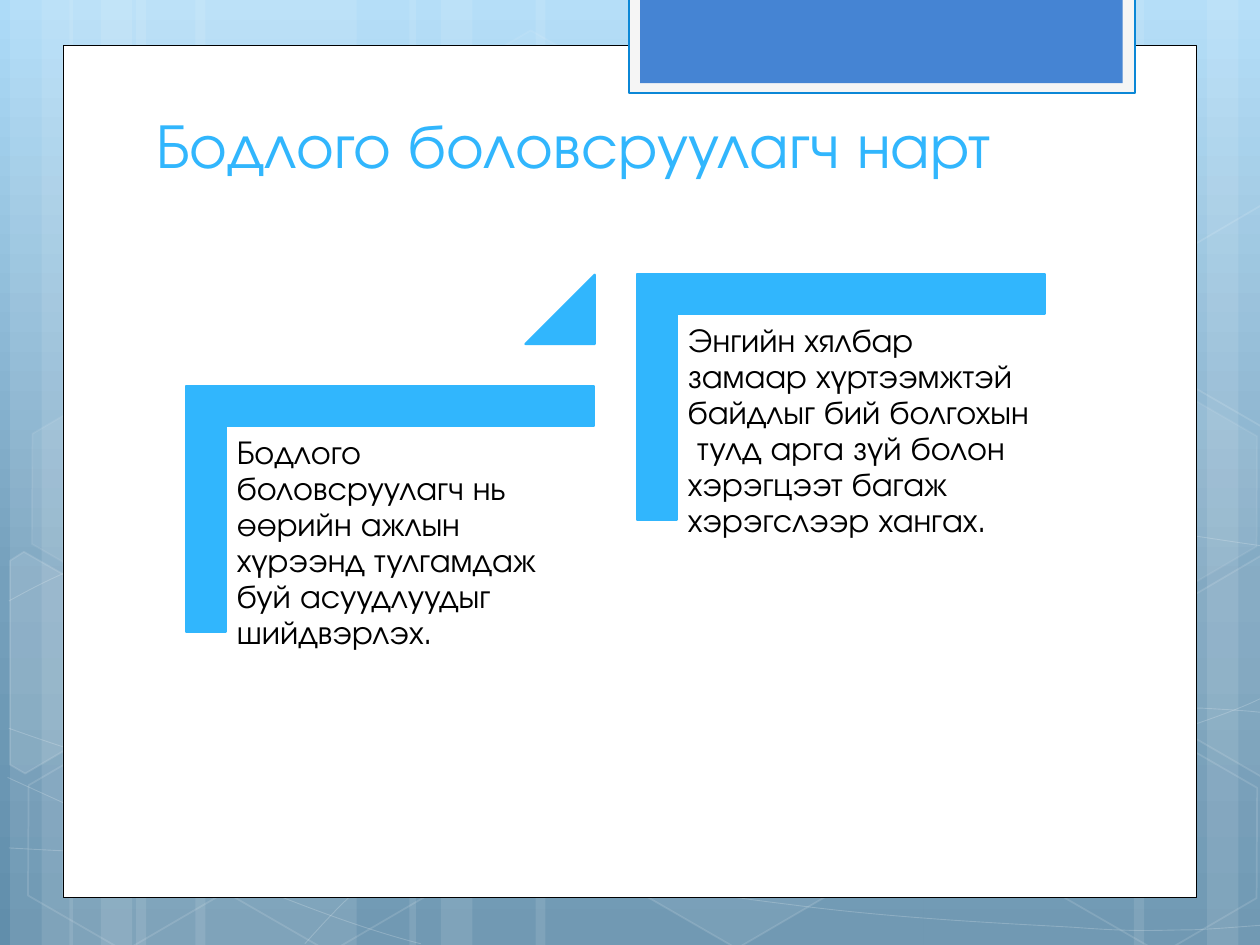
from lxml import etree
from pptx import Presentation
from pptx import util as u
from pptx.dml.color import RGBColor
from pptx.enum import shapes, text
from pptx.oxml import parse_xml
from pptx.oxml.ns import qn

FONT = "TeX Gyre Adventor"
BLUE, WHITE = "31B6FD", "FFFFFF"
TITLE = "Бодлого боловсруулагч нарт"
STEPS = [
    "Бодлого боловсруулагч нь өөрийн ажлын хүрээнд тулгамдаж буй "
    "асуудлуудыг шийдвэрлэх.",
    "Энгийн хялбар замаар хүртээмжтэй байдлыг бий болгохын  тулд "
    "арга зүй болон хэрэгцээт багаж хэрэгслээр хангах.",
]
SKY = [(0, "ADDBF8"), (62, "75A0BC"), (100, "618EAB")]

# Background bands: left, width
BANDS = [(1.08, 1.75), (0.08, 0.5), (0.33, 0.83), (1.55, 1.75), (0.55, 0.5),
         (0.8, 0.83), (7.33, 1.75), (9.58, 0.5), (9, 0.83), (4.25, 3.08),
         (3.25, 0.5), (3.5, 0.83)]

# Curves: a start point, then three points for each cubic piece
CURVES = [
    [(0.07, 6.73), (0.61, 6.76), (1.15, 6.79), (1.9, 6.78), (2.65, 6.77),
     (3.58, 6.75), (4.58, 6.65), (5.58, 6.55), (7, 6.36), (7.92, 6.17),
     (8.83, 5.98), (9.77, 5.68), (10.07, 5.51)],
    [(0.07, 4.77), (0.36, 4.61), (0.65, 4.46), (1.21, 4.31), (1.78, 4.16),
     (2.59, 3.94), (3.47, 3.87), (4.36, 3.8), (5.44, 3.79), (6.54, 3.87),
     (7.64, 3.95), (9.47, 4.26), (10.07, 4.34)],
    [(0.06, 6.17), (1.27, 6.72), (2.47, 7.27), (3.34, 7.49)],
    [(0.07, 5.78), (0.38, 5.89), (0.7, 6), (1.28, 6.16), (1.86, 6.31),
     (2.73, 6.56), (3.57, 6.73), (4.4, 6.9), (5.45, 7.08), (6.28, 7.18),
     (7.11, 7.29), (8, 7.33), (8.53, 7.36), (9.05, 7.4), (9.19, 7.38),
     (9.45, 7.38), (9.71, 7.37), (9.89, 7.35), (10.07, 7.34)],
    [(2.42, 7.49), (2.6, 7.29), (2.78, 7.09), (3.02, 6.91), (3.26, 6.73),
     (3.6, 6.53), (3.88, 6.39), (4.16, 6.25), (4.33, 6.19), (4.7, 6.09),
     (5.06, 5.99), (5.73, 5.85), (6.08, 5.78), (6.44, 5.71), (6.49, 5.71),
     (6.8, 5.69), (7.11, 5.66), (7.6, 5.63), (7.94, 5.62), (8.29, 5.61),
     (8.86, 5.62), (8.86, 5.62), (9.08, 5.62), (9.31, 5.62), (9.53, 5.62),
     (9.71, 5.63), (9.88, 5.64), (9.97, 5.65), (10.06, 5.66), (10.03, 5.65),
     (10.06, 5.66)],
]

# Hexagons: left, top, fill opacity, line opacity
HEXES = [(3.34, 0.36, 4, 8), (4.97, 5.89, 6, 12), (0.11, 5.91, 0, 12),
         (0.14, 3.12, 7, 8), (1.74, 5.92, 0, 12), (7.53, 4.53, 10, 12),
         (8.34, 5.93, 0, 12), (8.34, 3.14, 7, 8)]

# Hexagons cut by the slide edge: fill opacity, corners
CUTS = [
    (10, [(0.08, 4.45), (0.19, 4.38), (0.96, 4.82), (0.95, 5.7),
          (0.2, 6.14), (0.08, 6.07)]),
    (4, [(9.26, 4.85), (10.01, 4.41), (10.09, 4.46), (10.09, 6.13),
         (10.02, 6.17), (9.26, 5.73)]),
    (0, [(9.26, 2.07), (10.01, 1.63), (10.1, 1.68), (10.09, 3.35),
         (10.02, 3.39), (9.26, 2.95)]),
]

deck = Presentation()
deck.slide_width, deck.slide_height = u.Inches(10), u.Inches(7.5)
slide = deck.slides.add_slide(deck.slide_layouts[6])
KIND = shapes.MSO_SHAPE


def paint(fill, tone, alpha=100):
    """Solid fill with opacity in percent; none if there is nothing to show."""
    if not tone or not alpha:
        fill.background()
        return
    fill.solid()
    fill.fore_color.rgb = RGBColor.from_string(tone)
    if alpha < 100:
        node = fill.fore_color._xFill.find(qn("a:srgbClr"))
        etree.SubElement(node, qn("a:alpha"), val=str(alpha * 1000))


def style(item, fill=None, alpha=100, line=None, width=1, fade=100):
    item.shadow.inherit = False
    paint(item.fill, fill, alpha)
    paint(item.line.fill, line, fade)
    if line:
        item.line.width = u.Pt(width)


def shape(kind, box, turn=0, adj=(), **look):
    item = slide.shapes.add_shape(kind, *map(u.Inches, box))
    item.rotation = turn
    for i, value in enumerate(adj):
        item.adjustments[i] = value
    style(item, **look)


def trace(points, close, **look):
    spots = [(u.Inches(x), u.Inches(y)) for x, y in points]
    pen = slide.shapes.build_freeform(*spots[0])
    pen.add_line_segments(spots[1:], close=close)
    item = pen.convert_to_shape()
    style(item, **look)
    return item


def bend(item):
    """Join each three straight segments into one cubic curve."""
    lines = list(item._element.iter(qn("a:lnTo")))
    for i in range(0, len(lines), 3):
        cubic = etree.Element(qn("a:cubicBezTo"))
        lines[i].addprevious(cubic)
        for line in lines[i:i + 3]:
            cubic.append(line[0])
            line.getparent().remove(line)


def write(words, box, size, tone, pads, space=1):
    frame = slide.shapes.add_textbox(*map(u.Inches, box)).text_frame
    frame.word_wrap = True
    frame.vertical_anchor = text.MSO_ANCHOR.TOP
    (frame.margin_left, frame.margin_top,
     frame.margin_right, frame.margin_bottom) = map(u.Inches, pads)
    frame.text = words
    para = frame.paragraphs[0]
    para.line_spacing = space
    font = para.runs[0].font
    font.name, font.size = FONT, u.Pt(size)
    font.color.rgb = RGBColor.from_string(tone)


def backdrop():
    stops = "".join(f'<a:gs pos="{p * 1000}"><a:srgbClr val="{c}"/></a:gs>'
                    for p, c in SKY)
    space = "http://schemas.openxmlformats.org/"
    slide.element.cSld.insert(0, parse_xml(
        f'<p:bg xmlns:p="{space}presentationml/2006/main" '
        f'xmlns:a="{space}drawingml/2006/main"><p:bgPr><a:gradFill>'
        f'<a:gsLst>{stops}</a:gsLst><a:lin ang="5400000" scaled="0"/>'
        '</a:gradFill><a:effectLst/></p:bgPr></p:bg>'))
    for left, width in BANDS:
        shape(KIND.RECTANGLE, (left, 0, width, 7.5), fill=WHITE, alpha=10)
    for curve in CURVES:
        bend(trace(curve, False, line=WHITE, width=0.5, fade=20))
    for left, top, alpha, fade in HEXES:
        shape(KIND.HEXAGON, (left, top, 1.75, 1.52), 30, [0.285],
              fill=WHITE, alpha=alpha, line=WHITE, fade=fade)
    for alpha, points in CUTS:
        trace(points, True, fill=WHITE, alpha=alpha, line=WHITE, fade=12)


def panel():
    shape(KIND.RECTANGLE, (0.5, 0.36, 9, 6.76),
          fill=WHITE, line="000000", width=0.5)
    shape(KIND.RECTANGLE, (4.99, -0.02, 4.02, 0.76),
          fill="F5F5F5", line="0B87D6", width=1.25)
    shape(KIND.RECTANGLE, (5.08, -0.02, 3.83, 0.68), fill="4584D3")
    write(TITLE, (1.14, 0.84, 7.68, 1.25), 36, BLUE, (0.1, 0, 0.1, 0.05))


def stairs():
    look = dict(fill=BLUE, line=BLUE, width=1.25)
    for i, words in enumerate(STEPS):
        dx, dy = 3.58 * i, -0.89 * i
        shape(KIND.CORNER, (2.12 + dx, 2.42 + dy, 1.95, 3.24), 90,
              [0.161, 0.161], **look)
        write(words, (1.8 + dx, 3.38 + dy, 2.92, 2.56), 19, "000000",
              [0.08] * 4, 0.9)
        if i < len(STEPS) - 1:
            shape(KIND.ISOSCELES_TRIANGLE, (4.17 + dx, 2.18 + dy, 0.55, 0.55),
                  adj=[1], **look)


backdrop()
panel()
stairs()
deck.save("out.pptx")
